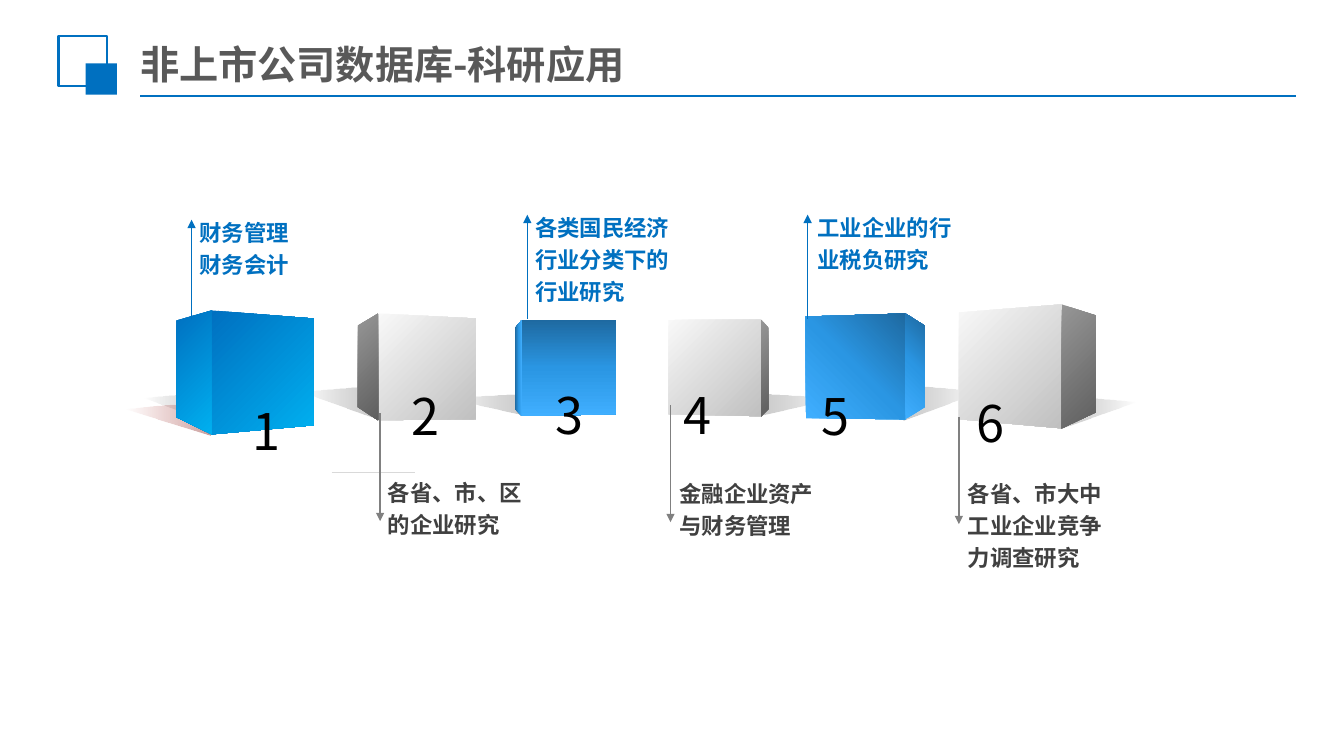
from lxml import etree
from pptx import Presentation
from pptx.dml.color import RGBColor
from pptx.enum.shapes import MSO_CONNECTOR, MSO_SHAPE
from pptx.enum.text import MSO_ANCHOR, PP_ALIGN
from pptx.oxml import parse_xml
from pptx.oxml.ns import nsdecls, qn
from pptx.util import Inches, Pt

STRAIGHT = MSO_CONNECTOR.STRAIGHT
RECTANGLE = MSO_SHAPE.RECTANGLE
MIDDLE, CENTER = MSO_ANCHOR.MIDDLE, PP_ALIGN.CENTER
FONT = "Noto Sans CJK SC"
BLUE, GRAY, DARK = "0070C0", "808080", "404040"

# Gradients: stops of (position, colour, opacity), then the direction
BLUE_STOPS = [(0, "1E69A0", 100), (50, "2A96E3", 100), (100, "40AFFF", 100)]
SHADOW_STOPS = [(0, "FFFFFF", 50), (100, "666666", 34)]
RED_STOPS = [(0, "C0504D", 0), (100, "933D3B", 50)]


def linear(angle):
    return f'<a:lin ang="{angle * 60000}" scaled="1"/>'


TO_BOTTOM_RIGHT = '<a:path path="circle"><a:fillToRect l="100000" t="100000"/></a:path>'
TO_TOP_RIGHT = '<a:path path="circle"><a:fillToRect l="100000" b="100000"/></a:path>'
CYAN = ([(0, "00B0F0", 100), (100, BLUE, 100)], TO_BOTTOM_RIGHT)
BLUE_CORNER = (BLUE_STOPS, TO_TOP_RIGHT)
BLUE_DOWN = (BLUE_STOPS, linear(90))
BLUE_ACROSS = (BLUE_STOPS, linear(0))
SILVER = ([(0, "F8F8F8", 100), (100, "C0C0C0", 100)], linear(45))
STEEL = ([(0, "969696", 100), (100, "5F5F5F", 100)], linear(45))


def color(value):
    return RGBColor.from_string(value)


presentation = Presentation()
presentation.slide_width = Inches(13.33)
presentation.slide_height = Inches(7.5)
slide = presentation.slides.add_slide(presentation.slide_layouts[6])
shapes = slide.shapes

# Two overlapping squares beside the title
for left, top, width, height, filled in [
    (0.58, 0.36, 0.48, 0.49, False),
    (0.85, 0.63, 0.31, 0.31, True),
]:
    square = shapes.add_shape(
        RECTANGLE, Inches(left), Inches(top), Inches(width), Inches(height))
    square.shadow.inherit = False
    if filled:
        square.fill.solid()
        square.fill.fore_color.rgb = color(BLUE)
        square.line.fill.background()
    else:
        square.fill.background()
        square.line.color.rgb = color(BLUE)
        square.line.width = Pt(1.5)

# Shadows: base bottom, tip, curve control, base top, stops, angle
outlines = []
for bottom, tip, control, top, stops, angle in [
    ((2.15, 4.21), (1.43, 3.95), (1.39, 3.94), (2.07, 3.89), SHADOW_STOPS, 0),
    ((5.21, 4.12), (4.44, 3.95), (4.41, 3.94), (5.13, 3.91), SHADOW_STOPS, 0),
    ((3.72, 4.15), (3.00, 3.89), (2.96, 3.88), (3.64, 3.83), SHADOW_STOPS, 0),
    ((7.54, 4.12), (8.30, 3.95), (8.34, 3.94), (7.62, 3.91), SHADOW_STOPS, 180),
    ((8.96, 4.17), (9.71, 3.89), (9.75, 3.88), (9.05, 3.82), SHADOW_STOPS, 180),
    ((10.53, 4.25), (11.26, 3.99), (11.29, 3.98), (10.61, 3.93), SHADOW_STOPS, 180),
    ((2.09, 4.32), (1.24, 4.06), (1.20, 4.05), (2.00, 3.99), RED_STOPS, 0),
]:
    points = [bottom]
    for step in range(9):
        t = step / 8
        weights = ((1 - t) ** 3, 3 * t * (1 - t) ** 2, 3 * t * t - 2 * t ** 3)
        points.append(tuple(
            sum(weight * point[axis] for weight, point in zip(weights, (tip, control, top)))
            for axis in (0, 1)))
    outlines.append((points, stops, linear(angle)))

# Cubes: shared edge (x, top, bottom), then outer edge and gradient of each face
for edge, front, front_gradient, side, side_gradient in [
    ((2.10, 3.08, 4.31), (3.11, 3.16, 4.22), CYAN, (1.75, 3.18, 4.14), CYAN),
    ((3.75, 3.11, 4.17), (4.72, 3.16, 4.16), SILVER, (3.55, 3.23, 4.04), STEEL),
    ((5.18, 3.17, 4.13), (6.11, 3.17, 4.11), BLUE_DOWN, (5.11, 3.25, 4.06), BLUE_ACROSS),
    ((7.55, 3.17, 4.13), (6.63, 3.17, 4.11), SILVER, (7.62, 3.25, 4.06), STEEL),
    ((8.98, 3.11, 4.16), (7.99, 3.14, 4.15), BLUE_CORNER, (9.17, 3.23, 4.04), BLUE_CORNER),
    ((10.53, 3.02, 4.25), (9.51, 3.10, 4.16), SILVER, (10.87, 3.13, 4.09), STEEL),
]:
    for outer, gradient in ((front, front_gradient), (side, side_gradient)):
        corners = [(edge[0], edge[1]), (edge[0], edge[2]),
                   (outer[0], outer[2]), (outer[0], outer[1])]
        outlines.append((corners, *gradient))

for points, stops, direction in outlines:
    points = [(Inches(x), Inches(y)) for x, y in points]
    builder = shapes.build_freeform(*points[0])
    builder.add_line_segments(points[1:], close=True)
    face = builder.convert_to_shape()
    face.shadow.inherit = False
    face.line.fill.background()
    face.fill.background()
    stop_xml = "".join(
        f'<a:gs pos="{position * 1000}"><a:srgbClr val="{value}">'
        f'<a:alpha val="{opacity * 1000}"/></a:srgbClr></a:gs>'
        for position, value, opacity in stops)
    properties = face._element.spPr
    properties.replace(properties.find(qn("a:noFill")), parse_xml(
        f'<a:gradFill {nsdecls("a")} rotWithShape="1"><a:gsLst>{stop_xml}</a:gsLst>'
        f'{direction}</a:gradFill>'))

# Title rule, hairline and arrows: start, end, colour, width, arrowhead
lines = [
    ((1.39, 0.95), (12.85, 0.95), BLUE, 1.25, False),
    ((3.29, 4.69), (4.12, 4.69), "D9D9D9", 0.5, False),
]
for x, tail, head, line_color in [
    (1.90, 3.16, 2.18, BLUE), (5.23, 3.16, 2.13, BLUE), (8.01, 3.16, 2.13, BLUE),
    (3.77, 4.10, 5.17, GRAY), (6.65, 4.02, 5.18, GRAY), (9.51, 4.14, 5.20, GRAY),
]:
    lines.append(((x, tail), (x, head), line_color, 1, True))
for start, end, line_color, width, arrow in lines:
    connector = shapes.add_connector(STRAIGHT, *map(Inches, start + end))
    connector.line.color.rgb = color(line_color)
    connector.line.width = Pt(width)
    if arrow:
        etree.SubElement(connector.line._get_or_add_ln(), qn("a:tailEnd"), type="triangle")
    etree.SubElement(connector._element.spPr, qn("a:effectLst"))

# Text: content, left, top, width, height, size, colour, kind
texts = [("非上市公司数据库-科研应用", 1.32, 0.39, 8.6, 0.48, 28, "595959", "title")]
for content, left, top, height, text_color in [
    ("财务管理\n财务会计", 1.88, 2.07, 0.75, BLUE),
    ("各省、市、区的企业研究", 3.75, 4.65, 0.75, DARK),
    ("各类国民经济行业分类下的行业研究", 5.21, 2.02, 1.07, BLUE),
    ("金融企业资产与财务管理", 6.64, 4.66, 0.72, DARK),
    ("工业企业的行业税负研究", 8.01, 2.02, 0.72, BLUE),
    ("各省、市大中工业企业竞争力调查研究", 9.5, 4.66, 1.04, DARK),
]:
    texts.append((content, left, top, 1.73, height, 16, text_color, "label"))
for number, (left, top) in enumerate(
        [(2.44, 3.92), (4.02, 3.77), (5.45, 3.76), (6.72, 3.76), (8.09, 3.77), (9.62, 3.84)], 1):
    texts.append((str(number), left, top, 0.16, 0.25, 36, "000000", "number"))

for content, left, top, width, height, size, text_color, kind in texts:
    box = shapes.add_textbox(Inches(left), Inches(top), Inches(width), Inches(height))
    frame = box.text_frame
    frame.word_wrap = kind != "number"
    frame.text = content
    if kind == "title":
        frame.vertical_anchor = MIDDLE
        frame.margin_left = frame.margin_right = Inches(0.07)
        frame.margin_top = frame.margin_bottom = Inches(0.04)
    for paragraph in frame.paragraphs:
        if kind == "label":
            paragraph.line_spacing = 1.2
        elif kind == "number":
            paragraph.alignment = CENTER
        for run in paragraph.runs:
            run.font.name = FONT
            run.font.size = Pt(size)
            run.font.bold = kind != "number"
            run.font.color.rgb = color(text_color)
            etree.SubElement(run.font._element, qn("a:ea"), typeface=FONT)

presentation.save("out.pptx")
